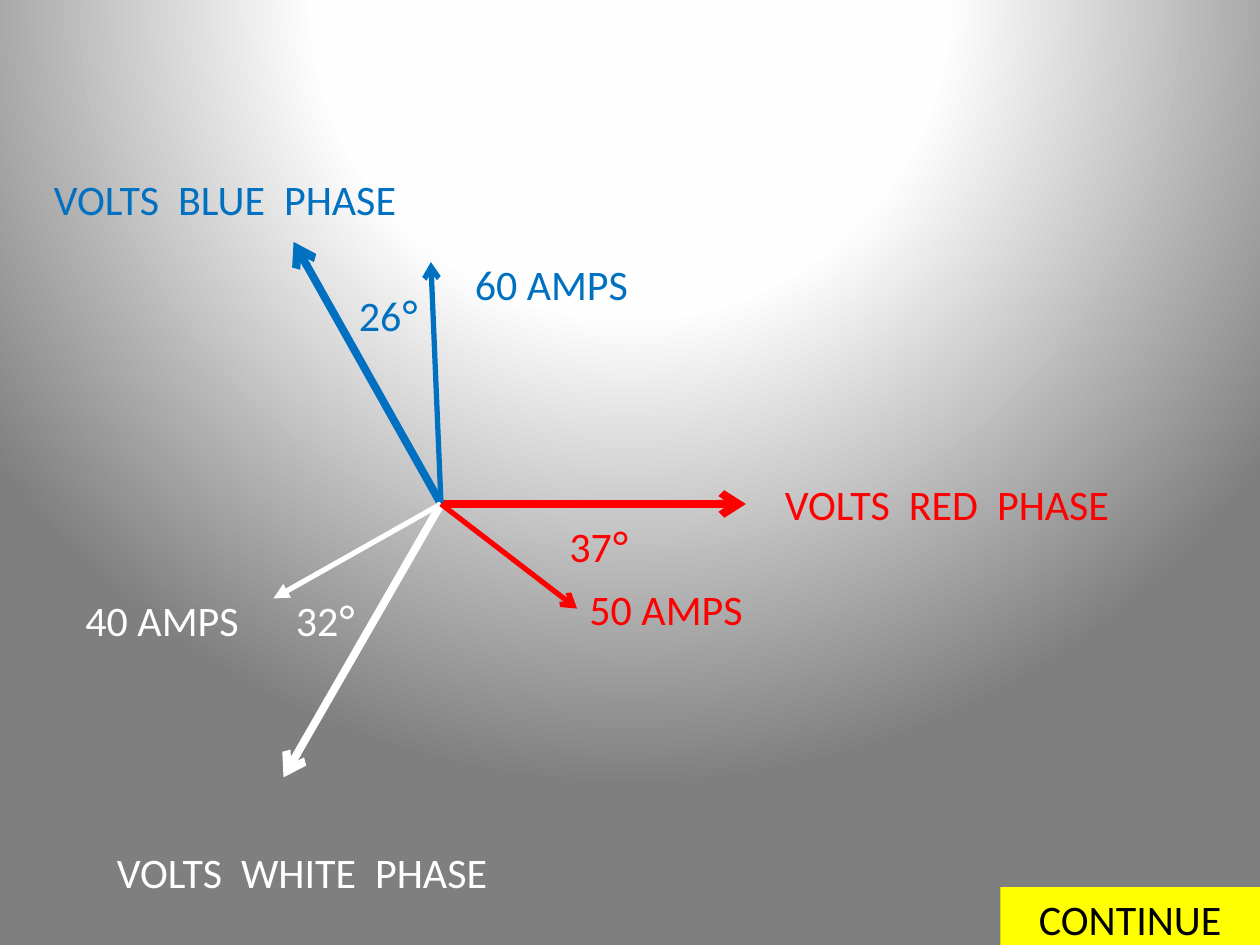
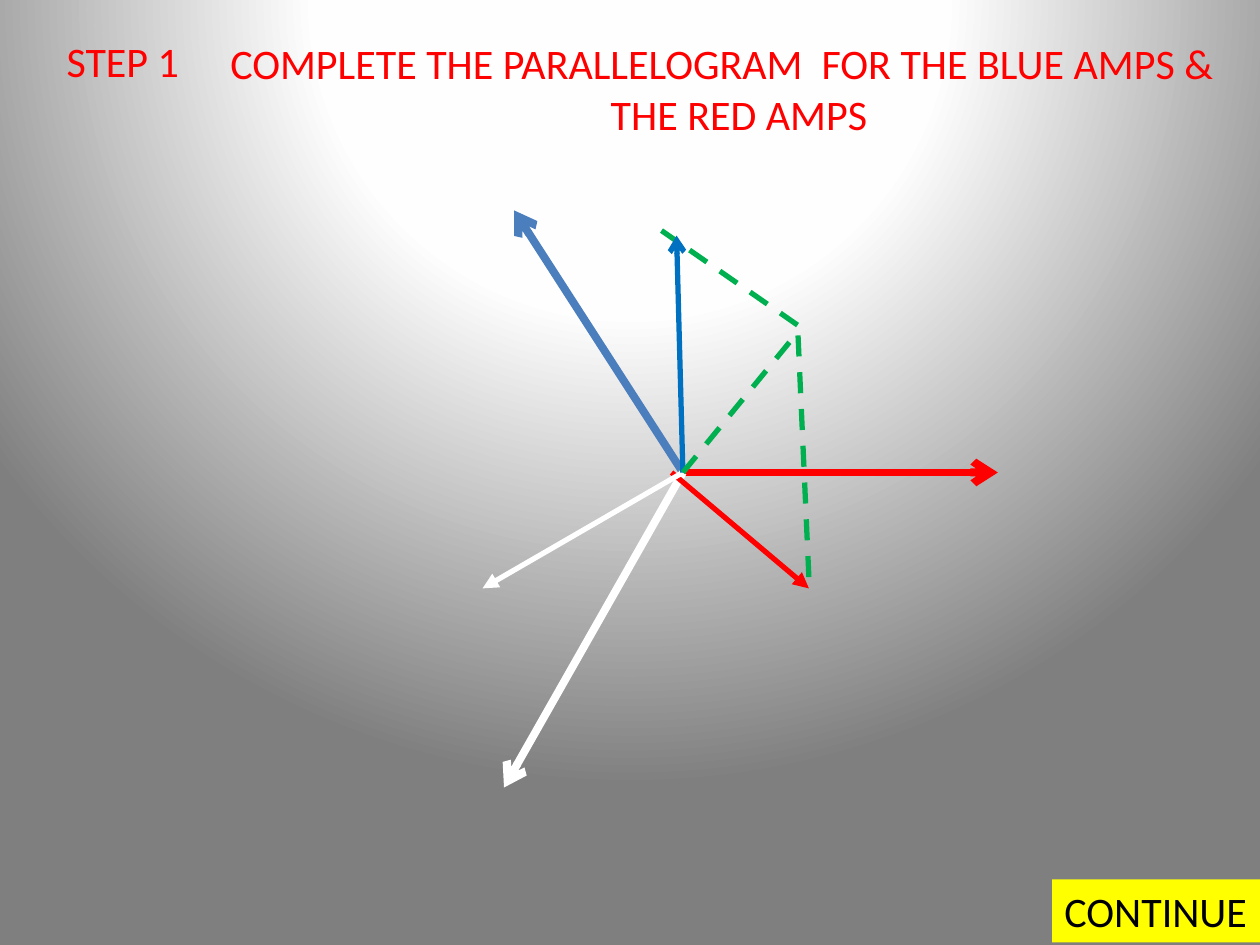
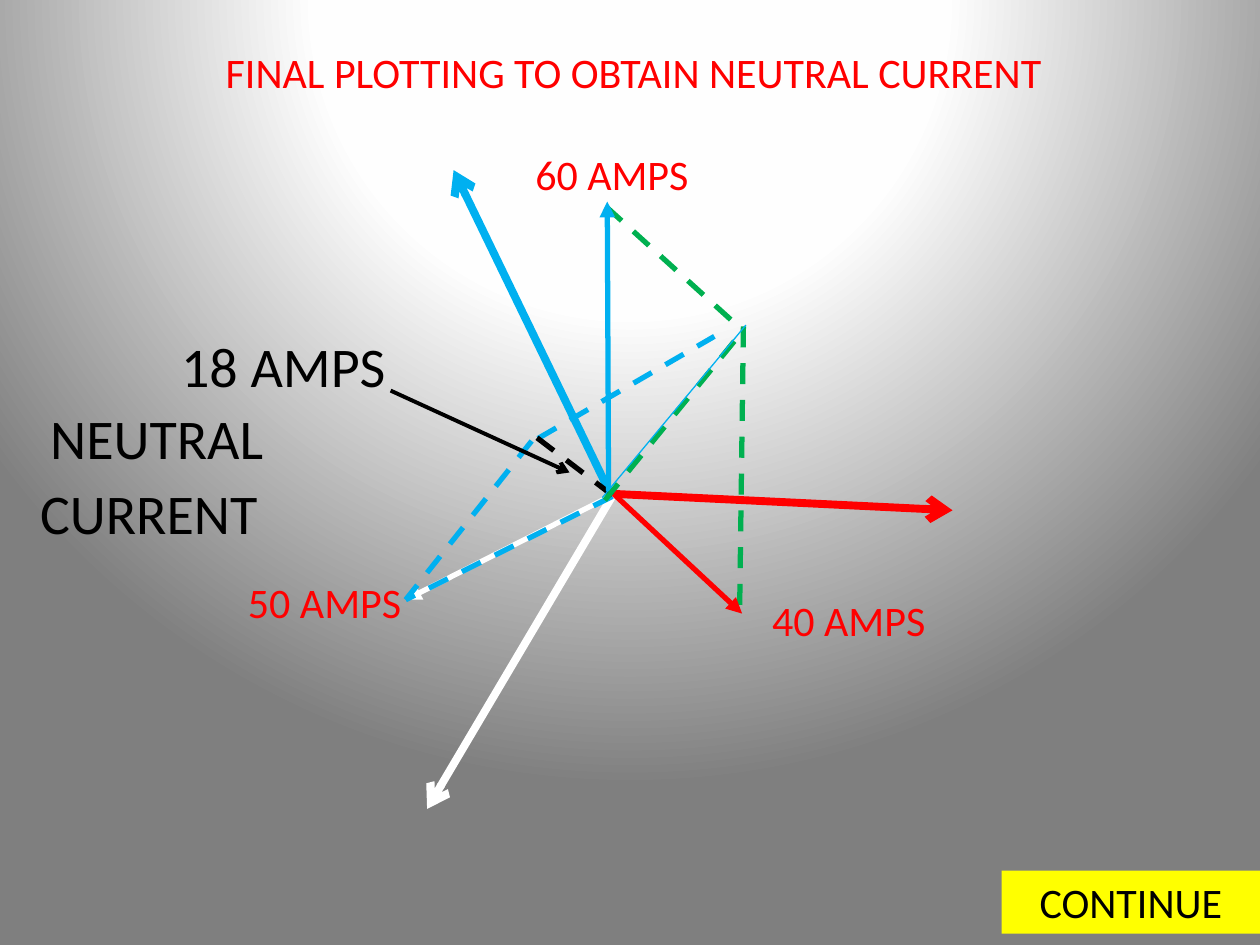
from dataclasses import dataclass
from functools import partial

from lxml.etree import SubElement
from pptx import Presentation
from pptx.dml.color import RGBColor
from pptx.enum.dml import MSO_LINE
from pptx.enum.shapes import MSO_CONNECTOR, MSO_SHAPE
from pptx.enum.text import MSO_ANCHOR, MSO_AUTO_SIZE, PP_ALIGN
from pptx.oxml import parse_xml
from pptx.oxml.ns import nsdecls, qn
from pptx.util import Emu, Pt

SCALE = 9144
WIDE, HIGH = 1000, 750
RED, BLUE, SKY, STEEL = "FF0000", "0070C0", "00B0F0", "4B7EBC"
GREEN, WHITE, BLACK, YELLOW = "00B050", "FFFFFF", "000000", "FFFF00"
STOPS = ((0, "FFFFFF"), (40, "FEFEFE"), (100, "7F7F7F"))
ALIGN = {"l": PP_ALIGN.LEFT, "c": PP_ALIGN.CENTER, "r": PP_ALIGN.RIGHT}


@dataclass
class Line:
    start: tuple[int, int]
    end: tuple[int, int]
    color: str
    weight: float = 3
    head: str = ""
    dash: bool = False


@dataclass
class Label:
    text: str
    x: int
    y: int
    w: int
    color: str = RED
    h: int = 50
    size: int = 24
    align: str = "l"
    wrap: bool = True
    fill: str = ""


Volt = partial(Line, weight=4.5, head="arrow")
Amp = partial(Line, head="triangle")
Dash = partial(Line, dash=True)
Note = partial(Label, color=BLACK, h=64, size=32)
Button = partial(Label, "CONTINUE", color=BLACK, fill=YELLOW)


def px(num: int) -> Emu:
    return Emu(num * SCALE)


def rgb(code: str) -> RGBColor:
    return RGBColor.from_string(code)


def write(frame, text: str, *, color: str, size: int, align: str, wrap: bool) -> None:
    frame.word_wrap = wrap
    frame.vertical_anchor = MSO_ANCHOR.TOP
    frame.auto_size = MSO_AUTO_SIZE.SHAPE_TO_FIT_TEXT
    for num, (row, side) in enumerate(zip(text.split("\n"), align)):
        para = frame.add_paragraph() if num else frame.paragraphs[0]
        para.alignment = ALIGN[side]
        words, sign, _ = row.partition("°")
        for part, face in ((words, "Calibri"), (sign, "Lato")):
            if part:
                run = para.add_run()
                run.text = part
                run.font.name = face
                run.font.size = Pt(size)
                run.font.color.rgb = rgb(color)


def draw_label(slide, item: Label) -> None:
    box = [px(num) for num in (item.x, item.y, item.w, item.h)]
    if item.fill:
        shape = slide.shapes.add_shape(MSO_SHAPE.RECTANGLE, *box)
        shape.shadow.inherit = False
        shape.fill.solid()
        shape.fill.fore_color.rgb = rgb(item.fill)
        shape.line.fill.background()
    else:
        shape = slide.shapes.add_textbox(*box)
    write(shape.text_frame, item.text, color=item.color, size=item.size,
          align=item.align, wrap=item.wrap)


def draw_line(slide, item: Line) -> None:
    ends = [px(num) for num in (*item.start, *item.end)]
    link = slide.shapes.add_connector(MSO_CONNECTOR.STRAIGHT, *ends)
    link.line.color.rgb = rgb(item.color)
    link.line.width = Pt(item.weight)
    if item.dash:
        link.line.dash_style = MSO_LINE.DASH
    props = link.element.spPr
    if item.head:
        SubElement(props.find(qn("a:ln")), qn("a:tailEnd"), type=item.head)
    SubElement(props, qn("a:effectLst"))


def paint(master) -> None:
    master.background.fill.gradient()
    old = next(master.element.iter(qn("a:gradFill")))
    stops = "".join(
        f'<a:gs pos="{pos * 1000}"><a:srgbClr val="{code}"/></a:gs>' for pos, code in STOPS)
    new = parse_xml(
        f'<a:gradFill {nsdecls("a")} rotWithShape="1"><a:gsLst>{stops}</a:gsLst>'
        '<a:path path="circle"><a:fillToRect l="50000" t="-80000" r="50000" b="180000"/>'
        '</a:path></a:gradFill>')
    old.getparent().replace(old, new)


def phases() -> list[Line | Label]:
    hub = (350, 400)
    return [
        Volt(hub, (592, 400), RED),
        Volt(hub, (233, 192), BLUE),
        Volt(hub, (225, 617), WHITE),
        Amp(hub, (342, 208), BLUE, head="arrow"),
        Amp(hub, (217, 475), WHITE),
        Amp(hub, (458, 483), RED, head="arrow"),
        Label("VOLTS  RED  PHASE", 613, 375, 328),
        Label("VOLTS  BLUE  PHASE", 33, 133, 403, BLUE),
        Label("VOLTS  WHITE  PHASE", 83, 667, 317, WHITE, wrap=False),
        Label("26°", 275, 225, 73, BLUE, wrap=False),
        Label("37°", 442, 408, 88),
        Label("32°", 225, 467, 85, WHITE),
        Label("60 AMPS", 367, 200, 143, BLUE, wrap=False),
        Label("50 AMPS", 458, 458, 158),
        Label("40 AMPS", 58, 467, 168, WHITE),
        Button(794, 704, 206, align="c"),
    ]


def step() -> list[Line | Label]:
    hub, peak = (542, 375), (633, 258)
    return [
        Dash((642, 458), peak, GREEN),
        Dash(peak, (525, 183), GREEN),
        Volt(hub, (792, 375), RED),
        Volt(hub, (408, 167), STEEL),
        Volt(hub, (400, 625), WHITE),
        Amp((533, 375), (642, 467), RED),
        Amp(hub, (383, 467), WHITE),
        Amp(hub, (537, 187), BLUE, head="arrow"),
        Label("STEP 1", 43, 23, 110, wrap=False),
        Label("COMPLETE THE PARALLELOGRAM  FOR THE BLUE AMPS &\nTHE RED AMPS",
              173, 25, 827, h=91, align="lc"),
        Dash(hub, (632, 265), GREEN),
        Button(835, 698, 166),
    ]


def final() -> list[Line | Label]:
    hub, base, west = (487, 392), (486, 393), (322, 476)
    return [
        Dash((427, 348), (567, 267), SKY),
        Volt((485, 393), (360, 135), SKY),
        Volt(hub, (756, 405), RED),
        Volt(hub, (339, 642), WHITE),
        Amp(base, west, WHITE),
        Dash((422, 350), west, SKY),
        Dash((486, 394), west, SKY),
        Dash((481, 164), (587, 260), GREEN),
        Dash((590, 259), (587, 488), GREEN),
        Dash(base, (423, 345), BLACK),
        Amp(hub, (589, 487), RED),
        Amp((483, 390), (482, 160), SKY),
        Label("FINAL PLOTTING TO OBTAIN NEUTRAL CURRENT", 83, 32, 840, align="c"),
        Note("18 AMPS", 133, 258, 183, align="r"),
        Label("60 AMPS", 415, 113, 184),
        Label("40 AMPS", 603, 467, 159),
        Label("50 AMPS", 187, 453, 143),
        Dash((480, 397), (590, 262), GREEN),
        Line((592, 258), (478, 395), SKY, 0.75),
        Line((310, 310), (452, 375), BLACK, 2.25, "arrow"),
        Note("NEUTRAL", 30, 315, 230),
        Note("CURRENT", 22, 375, 194, wrap=False),
        Button(795, 691, 205, align="c"),
    ]


def main() -> None:
    deck = Presentation()
    deck.slide_width, deck.slide_height = px(WIDE), px(HIGH)
    paint(deck.slide_master)
    for items in (phases(), step(), final()):
        slide = deck.slides.add_slide(deck.slide_layouts[6])
        for item in items:
            draw = draw_line if isinstance(item, Line) else draw_label
            draw(slide, item)
    deck.save("out.pptx")


if __name__ == "__main__":
    main()
